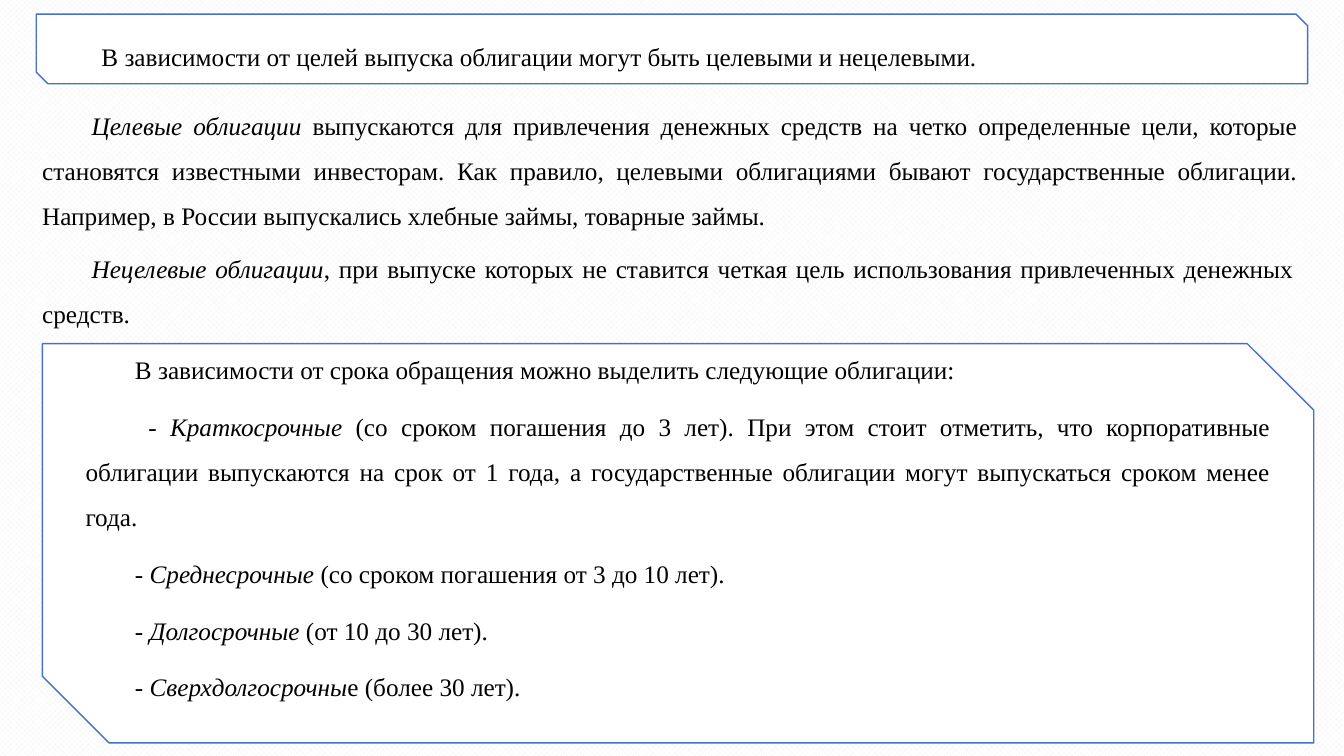
"""Build a slide on bond types by purpose of issue and by term."""
from pptx import Presentation
from pptx.dml.color import RGBColor
from pptx.enum.dml import MSO_PATTERN
from pptx.enum.shapes import MSO_SHAPE
from pptx.enum.text import MSO_ANCHOR, PP_ALIGN
from pptx.util import Inches, Pt

SNIPPED = MSO_SHAPE.SNIP_2_DIAG_RECTANGLE
DIAMONDS = MSO_PATTERN.OUTLINED_DIAMOND
MIDDLE = MSO_ANCHOR.MIDDLE
TOP = MSO_ANCHOR.TOP
JUSTIFY = PP_ALIGN.JUSTIFY

COLORS = {"text": "000000", "paper": "FFFFFF", "pattern": "F2F2F2", "outline": "4472C4"}
FONT = "Times New Roman"

PURPOSE = [[("В зависимости от целей выпуска облигации могут быть целевыми и нецелевыми.", False)]]
TARGETED = [[
    ("Целевые облигации", True),
    (" выпускаются для привлечения денежных средств на четко определенные цели, которые "
     "становятся известными инвесторам. Как правило, целевыми облигациями бывают "
     "государственные облигации. Например, в России выпускались хлебные займы, "
     "товарные займы.", False),
]]
UNTARGETED = [[
    ("Нецелевые облигации", True),
    (", при выпуске которых не ставится четкая цель использования привлеченных "
     "денежных средств.", False),
]]
TERMS = [
    [("В зависимости от срока обращения можно выделить следующие облигации:", False)],
    [(" - ", False), ("Краткосрочные", True),
     (" (со сроком погашения до 3 лет). При этом стоит отметить, что корпоративные "
      "облигации выпускаются на срок от 1 года, а государственные облигации могут "
      "выпускаться сроком менее года.", False)],
    [("- Среднесрочные", True), (" (со сроком погашения от 3 до 10 лет).", False)],
    [("- Долгосрочные", True), (" (от 10 до 30 лет).", False)],
    [("- Сверхдолгосрочны", True), ("е (более 30 лет).", False)],
]

PANELS = [
    (PURPOSE, (0.36, 0.14, 12.61, 0.69), 0.05),
    (TERMS, (0.42, 3.41, 12.61, 3.96), 0.5),
]
NOTES = [
    (TARGETED, (0.32, 0.89, 12.65, 1.42)),
    (UNTARGETED, (0.32, 2.31, 12.61, 0.96)),
]


def color(name):
    return RGBColor.from_string(COLORS[name])


def write_text(shape, paragraphs, anchor):
    frame = shape.text_frame
    frame.word_wrap = True
    frame.vertical_anchor = anchor
    for index, runs in enumerate(paragraphs):
        paragraph = frame.add_paragraph() if index else frame.paragraphs[0]
        paragraph.alignment = JUSTIFY
        paragraph.line_spacing = 1.5
        paragraph.space_after = Pt(8)
        paragraph._p.get_or_add_pPr().set("indent", str(Inches(0.49)))
        for text, italic in runs:
            run = paragraph.add_run()
            run.text = text
            run.font.name = FONT
            run.font.size = Pt(18)
            run.font.italic = italic
            run.font.color.rgb = color("text")


def add_panel(slide, paragraphs, box, bottom_margin):
    shape = slide.shapes.add_shape(SNIPPED, *map(Inches, box))
    shape.shadow.inherit = False
    shape.fill.solid()
    shape.fill.fore_color.rgb = color("paper")
    shape.line.color.rgb = color("outline")
    shape.line.width = Pt(1)
    shape.text_frame.margin_bottom = Inches(bottom_margin)
    write_text(shape, paragraphs, MIDDLE)


def main():
    presentation = Presentation()
    presentation.slide_width = Inches(13.33)
    presentation.slide_height = Inches(7.5)
    slide = presentation.slides.add_slide(presentation.slide_layouts.get_by_name("Blank"))

    background = slide.background.fill
    background.patterned()
    background.pattern = DIAMONDS
    background.fore_color.rgb = color("pattern")
    background.back_color.rgb = color("paper")

    for paragraphs, box, bottom_margin in PANELS:
        add_panel(slide, paragraphs, box, bottom_margin)
    for paragraphs, box in NOTES:
        write_text(slide.shapes.add_textbox(*map(Inches, box)), paragraphs, TOP)

    presentation.save("out.pptx")


if __name__ == "__main__":
    main()
